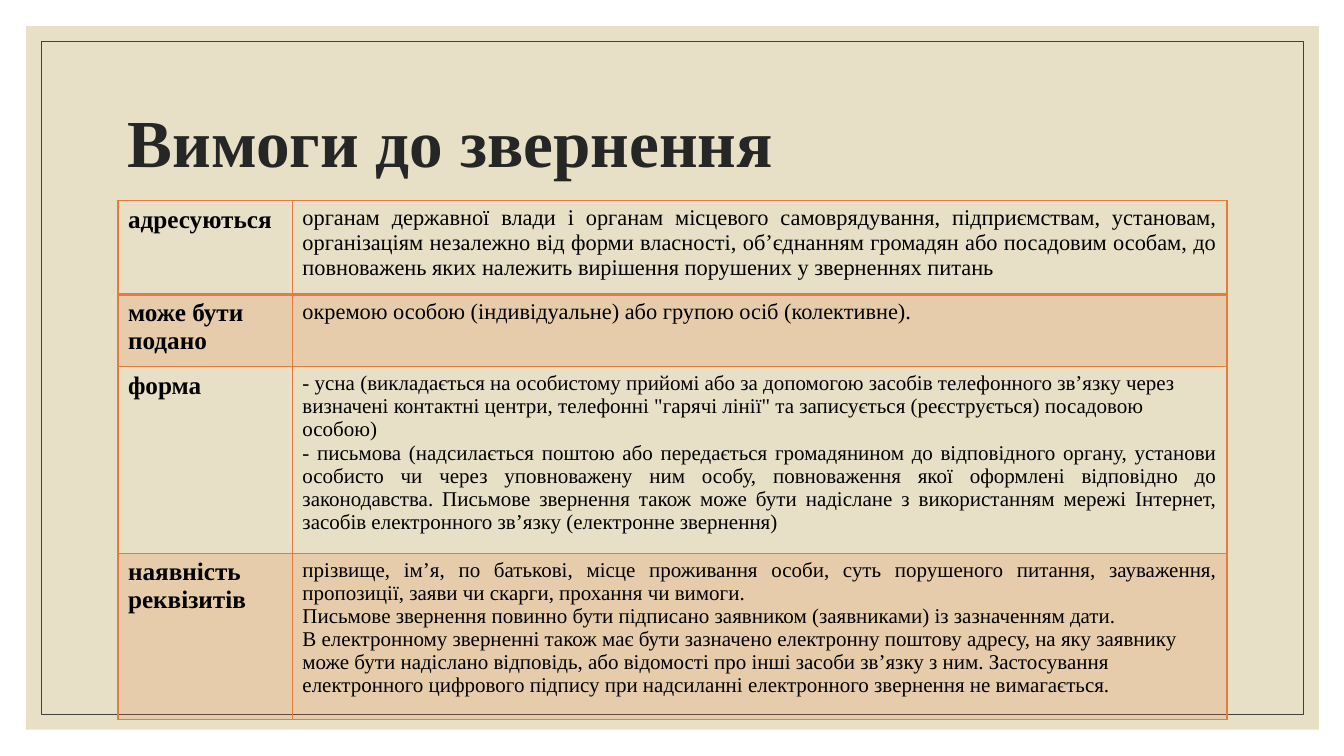
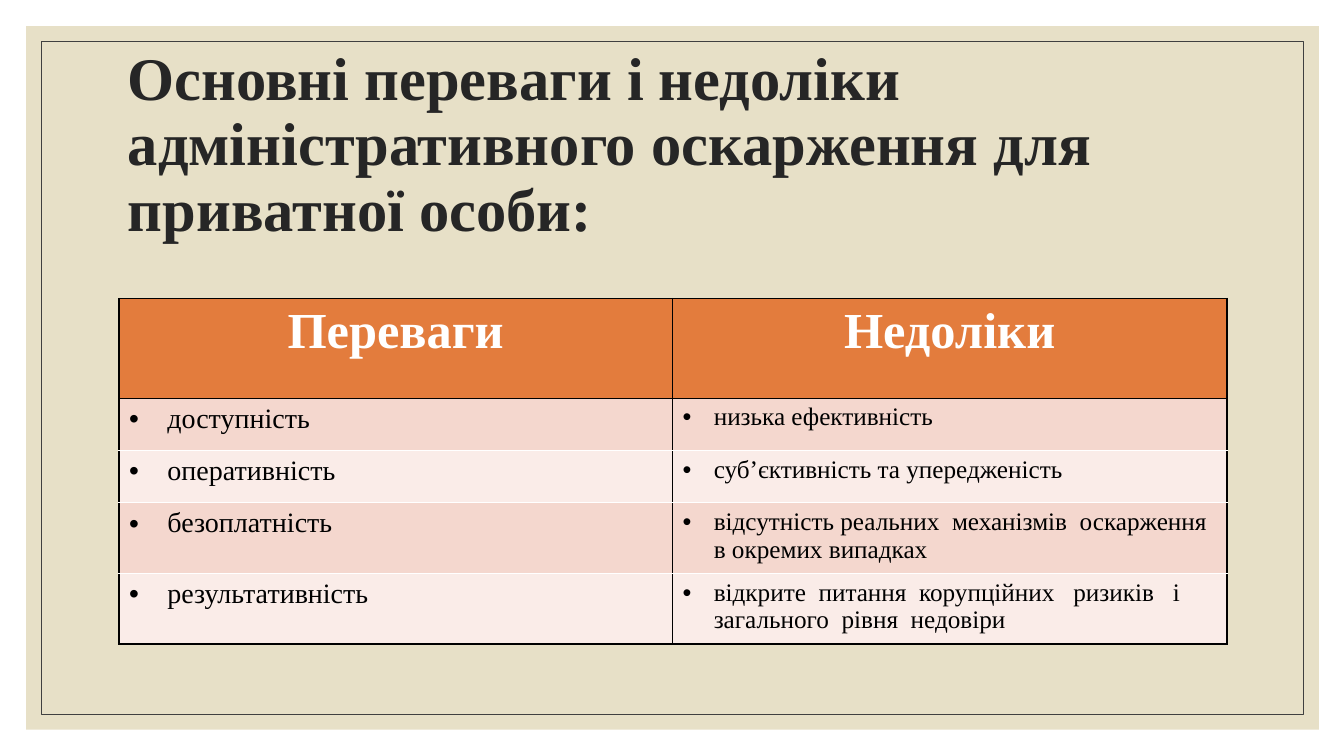
from lxml import etree
from pptx import Presentation
from pptx.dml.color import RGBColor
from pptx.enum.shapes import MSO_SHAPE
from pptx.enum.text import MSO_ANCHOR, PP_ALIGN
from pptx.oxml.ns import qn
from pptx.util import Emu, Pt

EMU_PER_PX = 9144
FONT = "Times New Roman"
SAND, FRAME, INK = "E7E0C7", "404040", "262626"
ORANGE, ROSE, PALE_ROSE = "E37C3D", "F4D7CE", "FAECE8"
BLACK, WHITE = "000000", "FFFFFF"
RECTANGLE = MSO_SHAPE.RECTANGLE
MIDDLE = MSO_ANCHOR.MIDDLE
LEFT, CENTER, JUSTIFY = PP_ALIGN.LEFT, PP_ALIGN.CENTER, PP_ALIGN.JUSTIFY

REQUIREMENTS = [
    ("адресуються", 16, [
        (JUSTIFY, "органам державної влади і органам місцевого самоврядування, "
                  "підприємствам, установам, організаціям незалежно від форми власності, "
                  "об’єднанням громадян або посадовим особам, до повноважень яких належить "
                  "вирішення порушених у зверненнях питань")]),
    ("може бути подано", 16, [
        (LEFT, "окремою особою (індивідуальне) або групою осіб (колективне).")]),
    ("форма", 15, [
        (LEFT, "- усна (викладається на особистому прийомі або за допомогою засобів "
               "телефонного зв’язку через визначені контактні центри, телефонні "
               "\"гарячі лінії\" та записується (реєструється) посадовою особою)"),
        (JUSTIFY, "- письмова (надсилається поштою або передається громадянином до "
                  "відповідного органу, установи особисто чи через уповноважену ним особу, "
                  "повноваження якої оформлені відповідно до законодавства. Письмове "
                  "звернення також може бути надіслане з використанням мережі Інтернет, "
                  "засобів електронного зв’язку (електронне звернення)")]),
    ("наявність реквізитів", 15, [
        (JUSTIFY, "прізвище, ім’я, по батькові, місце проживання особи, суть порушеного "
                  "питання, зауваження, пропозиції, заяви чи скарги, прохання чи вимоги."),
        (LEFT, "Письмове звернення повинно бути підписано заявником (заявниками) "
               "із зазначенням дати."),
        (LEFT, "В електронному зверненні також має бути зазначено електронну поштову "
               "адресу, на яку заявнику може бути надіслано відповідь, або відомості про "
               "інші засоби зв’язку з ним. Застосування електронного цифрового підпису при "
               "надсиланні електронного звернення не вимагається.")]),
]

HEADINGS = ("Переваги", "Недоліки")
COMPARISON = [
    ("доступність", "низька ефективність"),
    ("оперативність", "суб’єктивність та упередженість"),
    ("безоплатність", "відсутність реальних  механізмів  оскарження в окремих випадках"),
    ("результативність",
     "відкрите  питання  корупційних   ризиків   і   загального  рівня  недовіри"),
]
BULLET_STYLES = ((20, 38), (18, 31))


def px(length):
    return Emu(length * EMU_PER_PX)


def color(code):
    return RGBColor.from_string(code)


def add_rectangle(page, left, top, width, height, fill=None, line=None):
    box = page.shapes.add_shape(RECTANGLE, px(left), px(top), px(width), px(height))
    box.shadow.inherit = False
    if fill:
        box.fill.solid()
        box.fill.fore_color.rgb = color(fill)
    else:
        box.fill.background()
    if line:
        box.line.color.rgb = color(line)
        box.line.width = Pt(0.5)
    else:
        box.line.fill.background()


def write_text(para, text, size, ink=BLACK, bold=False, align=LEFT):
    para.alignment = align
    span = para.add_run()
    span.text = text
    span.font.name = FONT
    span.font.size = Pt(size)
    span.font.bold = bold
    span.font.color.rgb = color(ink)


def add_bullet(para, indent):
    properties = para._p.get_or_add_pPr()
    properties.set("marL", str(px(indent)))
    properties.set("indent", str(-px(indent)))
    etree.SubElement(properties, qn("a:buFont"), typeface="Arial")
    etree.SubElement(properties, qn("a:buChar"), char="•")


def set_borders(cell, left, top, right, bottom):
    properties = cell._tc.get_or_add_tcPr()
    sides = {"a:lnL": left, "a:lnR": right, "a:lnT": top, "a:lnB": bottom}
    for tag, (code, width) in sides.items():
        line = etree.SubElement(properties, qn(tag), w=str(Pt(width)))
        fill = etree.SubElement(line, qn("a:solidFill"))
        etree.SubElement(fill, qn("a:srgbClr"), val=code)


def fill_cell(cell, code, opacity=100):
    cell.fill.solid()
    cell.fill.fore_color.rgb = color(code)
    if opacity < 100:
        tint = cell._tc.tcPr.find(qn("a:solidFill")).find(qn("a:srgbClr"))
        etree.SubElement(tint, qn("a:alpha"), val=str(opacity * 1000))


def add_page(deck, title, size):
    page = deck.slides.add_slide(deck.slide_layouts[6])
    add_rectangle(page, 26, 26, 1282, 698, fill=SAND)
    add_rectangle(page, 41, 41, 1252, 668, line=FRAME)
    box = page.shapes.add_textbox(px(117), px(70), px(1100), px(150))
    box.text_frame.word_wrap = True
    box.text_frame.vertical_anchor = MIDDLE
    para = box.text_frame.paragraphs[0]
    para.line_spacing = 0.9
    write_text(para, title, size, INK, bold=True)
    return page


def add_grid(page, left, top, widths, heights):
    frame = page.shapes.add_table(len(heights), len(widths), px(left), px(top),
                                  px(sum(widths)), px(sum(heights)))
    table = frame.table
    table.first_row = False
    table.horz_banding = False
    for column, width in zip(table.columns, widths):
        column.width = px(width)
    for row, height in zip(table.rows, heights):
        row.height = px(height)
    return table


def add_requirements(page):
    table = add_grid(page, 117, 199, (173, 927), (93, 72, 165, 165))
    thin, thick = (ORANGE, 1), (ORANGE, 2)
    for index, (label, size, details) in enumerate(REQUIREMENTS):
        cells = table.rows[index].cells
        for cell in cells:
            set_borders(cell, thin, thick if index == 1 else thin,
                        thin, thick if index == 0 else thin)
            if index % 2:
                fill_cell(cell, ORANGE, opacity=20)
            else:
                cell.fill.background()
        write_text(cells[0].text_frame.paragraphs[0], label, 18, bold=True)
        frame = cells[1].text_frame
        for number, (align, text) in enumerate(details):
            para = frame.add_paragraph() if number else frame.paragraphs[0]
            write_text(para, text, size, align=align)


def add_comparison(page):
    table = add_grid(page, 118, 296, (549, 550), [99] + [52] * len(COMPARISON))
    black, white = (BLACK, 1), (WHITE, 1)
    for cell, heading in zip(table.rows[0].cells, HEADINGS):
        set_borders(cell, black, black, black, black)
        fill_cell(cell, ORANGE)
        write_text(cell.text_frame.paragraphs[0], heading, 36, WHITE, True, CENTER)
    for index, texts in enumerate(COMPARISON, start=1):
        top = black if index == 1 else white
        bottom = black if index == len(COMPARISON) else white
        for cell, text, (size, indent) in zip(table.rows[index].cells, texts, BULLET_STYLES):
            set_borders(cell, black, top, black, bottom)
            fill_cell(cell, ROSE if index % 2 else PALE_ROSE)
            para = cell.text_frame.paragraphs[0]
            write_text(para, text, size)
            add_bullet(para, indent)


def main():
    deck = Presentation()
    deck.slide_width = px(1333)
    deck.slide_height = px(750)
    add_requirements(add_page(deck, "Вимоги до звернення", 48))
    add_comparison(add_page(
        deck, "Основні переваги і недоліки адміністративного оскарження для приватної особи:",
        43.2))
    deck.save("out.pptx")


if __name__ == "__main__":
    main()
